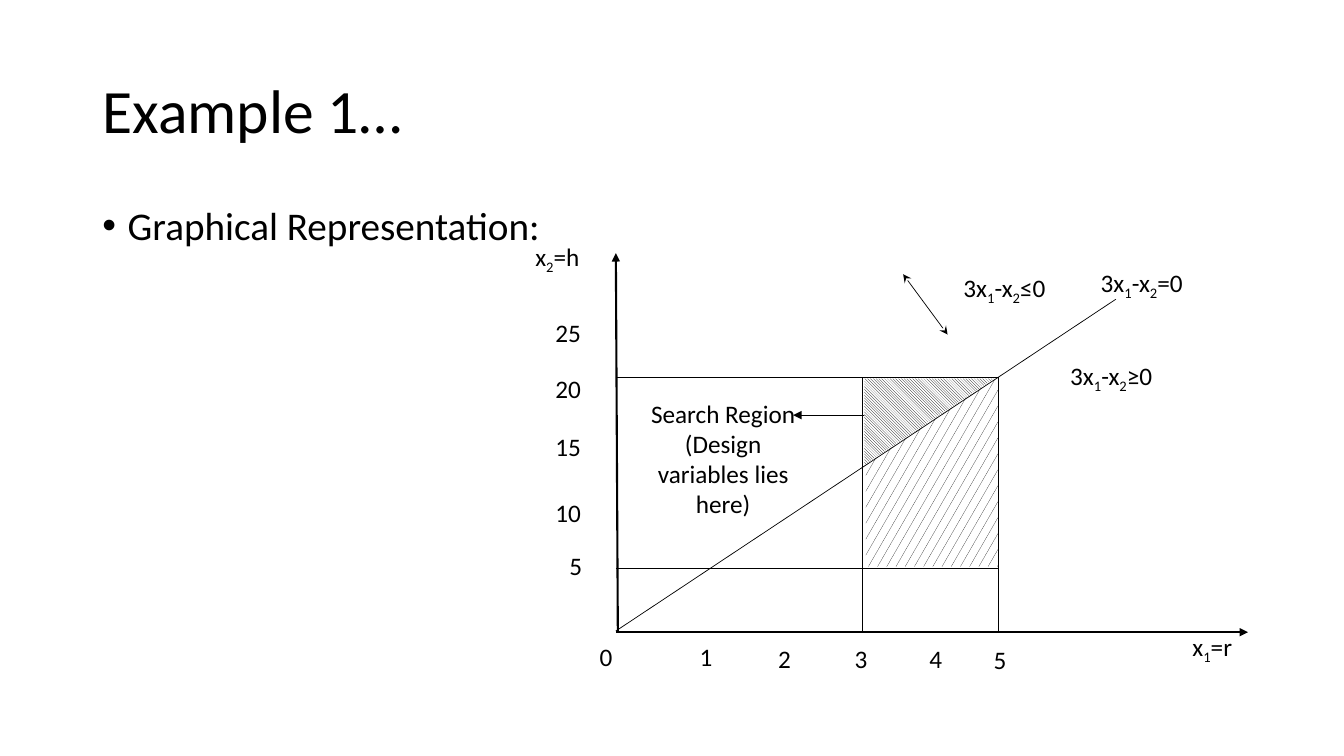
import dataclasses
import typing

import lxml.etree
import pptx
import pptx.dml.color
import pptx.enum.dml
import pptx.enum.shapes
import pptx.enum.text
import pptx.oxml.ns
import pptx.util

Cm = pptx.util.Cm
Pt = pptx.util.Pt
ALIGN = pptx.enum.text.PP_ALIGN
ANCHOR = pptx.enum.text.MSO_ANCHOR
PATTERN = pptx.enum.dml.MSO_PATTERN
SHAPE = pptx.enum.shapes.MSO_SHAPE

COLOURS = {"ink": "000000", "paper": "FFFFFF"}
FONT = "Calibri"

# Plot positions in centimetres
AXIS_X, AXIS_Y = 15.52, 15.93
R_MIN, R_MAX = 21.74, 25.15
H_MAX, H_MIN = 9.5, 14.33
TICK_HEIGHT = 1.32


@dataclasses.dataclass
class Line:
    start: tuple[float, float]
    end: tuple[float, float]
    weight: float = 0.5
    head: str = ""
    tail: str = ""


@dataclasses.dataclass
class Label:
    text: str
    left: float
    top: float
    width: float = 0.81
    height: float = TICK_HEIGHT
    align: typing.Any = ALIGN.LEFT


@dataclasses.dataclass
class Region:
    preset: typing.Any
    left: float
    top: float
    width: float
    height: float
    pattern: typing.Any
    rotation: float = 0


GRID_LINES = [
    Line((AXIS_X, AXIS_Y), (31.45, AXIS_Y), 1.5, tail="triangle"),
    Line((22.12, 10.46), (19.99, 10.46), tail="triangle"),
    *[Line((x, 15.9), (x, H_MAX)) for x in (R_MIN, R_MAX)],
    *[Line((AXIS_X, y), (R_MAX, y)) for y in (H_MIN, H_MAX)],
    Line((15.57, AXIS_Y), (AXIS_X, 6.38), 1.5, tail="triangle"),
]
CONSTRAINT_LINES = [
    Line((AXIS_X, 15.9), (28.12, 7.54)),
    Line((23.88, 8.43), (22.76, 6.91), head="stealth", tail="stealth"),
]
REGIONS = [
    Region(SHAPE.RECTANGLE, 21.82, 9.58, 3.33, 4.7, PATTERN.SMALL_CONFETTI),
    Region(SHAPE.ISOSCELES_TRIANGLE, 22.33, 8.99, 2.18, 3.28,
           PATTERN.DARK_DOWNWARD_DIAGONAL, 90),
]
R_TICKS = [(15.11, 16.15), (17.63, 16.15), (19.61, 16.21),
           (21.54, 16.21), (23.42, 16.21), (25.04, 16.23)]
H_TICKS = [(14.35, 13.87), (14, 12.52), (14, 10.87), (14, 9.42), (14, 8)]
LABELS = [
    *[Label(str(r), *place) for r, place in enumerate(R_TICKS)],
    *[Label(str(5 * step), *place, 1.22) for step, place in enumerate(H_TICKS, 1)],
    Label("x_1=r", 30.05, 15.9, 3.1),
    Label("x_2=h", 13.49, 6.07, 3.1),
    Label("3x_1-x_2=0", 27.74, 6.73, 4.57),
    Label("3x_1-x_2≤0", 24.28, 6.86, 4.57),
    Label("3x_1-x_2≥0", 26.97, 9.07, 4.57),
    Label("Search Region\n(Design variables lies here)", 16.28, 10.03, 3.89, 3.07,
          ALIGN.CENTER),
]


def colour(name: str) -> pptx.dml.color.RGBColor:
    return pptx.dml.color.RGBColor.from_string(COLOURS[name])


def write_text(frame, text: str, *, size: float, align=ALIGN.LEFT, anchor=ANCHOR.TOP,
               line_spacing: float = 1.0, space_before: float = 0) -> None:
    """Fill a frame, one paragraph a line; the character after "_" is a subscript."""
    frame.word_wrap = True
    frame.vertical_anchor = anchor
    for number, line in enumerate(text.split("\n")):
        para = frame.add_paragraph() if number else frame.paragraphs[0]
        para.alignment = align
        para.line_spacing = line_spacing
        para.space_before = Pt(space_before)
        first, *others = line.split("_")
        pieces = [(first, False)]
        for other in others:
            pieces += [(other[0], True), (other[1:], False)]
        for piece, subscript in pieces:
            span = para.add_run()
            span.text = piece
            span.font.name = FONT
            span.font.size = Pt(size)
            span.font.color.rgb = colour("ink")
            if subscript:
                span.font._element.set("baseline", "-25000")


def add_child(parent, tag: str, **attributes: str) -> None:
    lxml.etree.SubElement(parent, pptx.oxml.ns.qn(tag), attributes)


def draw_line(page, line: Line) -> None:
    connector = page.shapes.add_connector(
        pptx.enum.shapes.MSO_CONNECTOR.STRAIGHT,
        *[Cm(value) for value in (*line.start, *line.end)])
    connector.line.width = Pt(line.weight)
    connector.line.color.rgb = colour("ink")
    outline = connector.line._get_or_add_ln()
    for tag, arrowhead in (("a:headEnd", line.head), ("a:tailEnd", line.tail)):
        if arrowhead:
            add_child(outline, tag, type=arrowhead)
    add_child(connector._element.spPr, "a:effectLst")


def draw_region(page, region: Region) -> None:
    shape = page.shapes.add_shape(region.preset, Cm(region.left), Cm(region.top),
                                  Cm(region.width), Cm(region.height))
    shape.shadow.inherit = False
    shape.rotation = region.rotation
    if region.preset == SHAPE.ISOSCELES_TRIANGLE:
        shape.adjustments[0] = 0
    shape.fill.patterned()
    shape.fill.pattern = region.pattern
    shape.fill.fore_color.rgb = colour("ink")
    shape.fill.back_color.rgb = colour("paper")
    shape.line.fill.background()


def draw_label(page, label: Label) -> None:
    box = page.shapes.add_textbox(Cm(label.left), Cm(label.top),
                                  Cm(label.width), Cm(label.height))
    frame = box.text_frame
    frame.margin_left = frame.margin_right = frame.margin_top = frame.margin_bottom = 0
    write_text(frame, label.text, size=18, align=label.align)


def draw_heading(page) -> None:
    title = page.shapes.title
    title.left, title.top, title.width, title.height = Cm(2.33), Cm(1.02), Cm(29.21), Cm(3.68)
    title.text_frame.auto_size = pptx.enum.text.MSO_AUTO_SIZE.NONE
    write_text(title.text_frame, "Example 1…", size=44, anchor=ANCHOR.MIDDLE,
               line_spacing=0.9)

    body = page.shapes.add_textbox(Cm(2.33), Cm(5.08), Cm(29.21), Cm(12.09))
    write_text(body.text_frame, "Graphical Representation:", size=28,
               line_spacing=0.9, space_before=10)
    properties = body.text_frame.paragraphs[0]._p.get_or_add_pPr()
    indent = Cm(0.64)
    properties.set("marL", str(indent))
    properties.set("indent", str(-indent))
    add_child(properties, "a:buFont", typeface="Arial")
    add_child(properties, "a:buChar", char="•")


def main() -> None:
    deck = pptx.Presentation()
    deck.slide_width, deck.slide_height = Cm(33.87), Cm(19.05)
    page = deck.slides.add_slide(deck.slide_layouts.get_by_name("Title Only"))
    draw_heading(page)
    for line in GRID_LINES:
        draw_line(page, line)
    for region in REGIONS:
        draw_region(page, region)
    for label in LABELS:
        draw_label(page, label)
    for line in CONSTRAINT_LINES:
        draw_line(page, line)
    deck.save("out.pptx")


if __name__ == "__main__":
    main()
